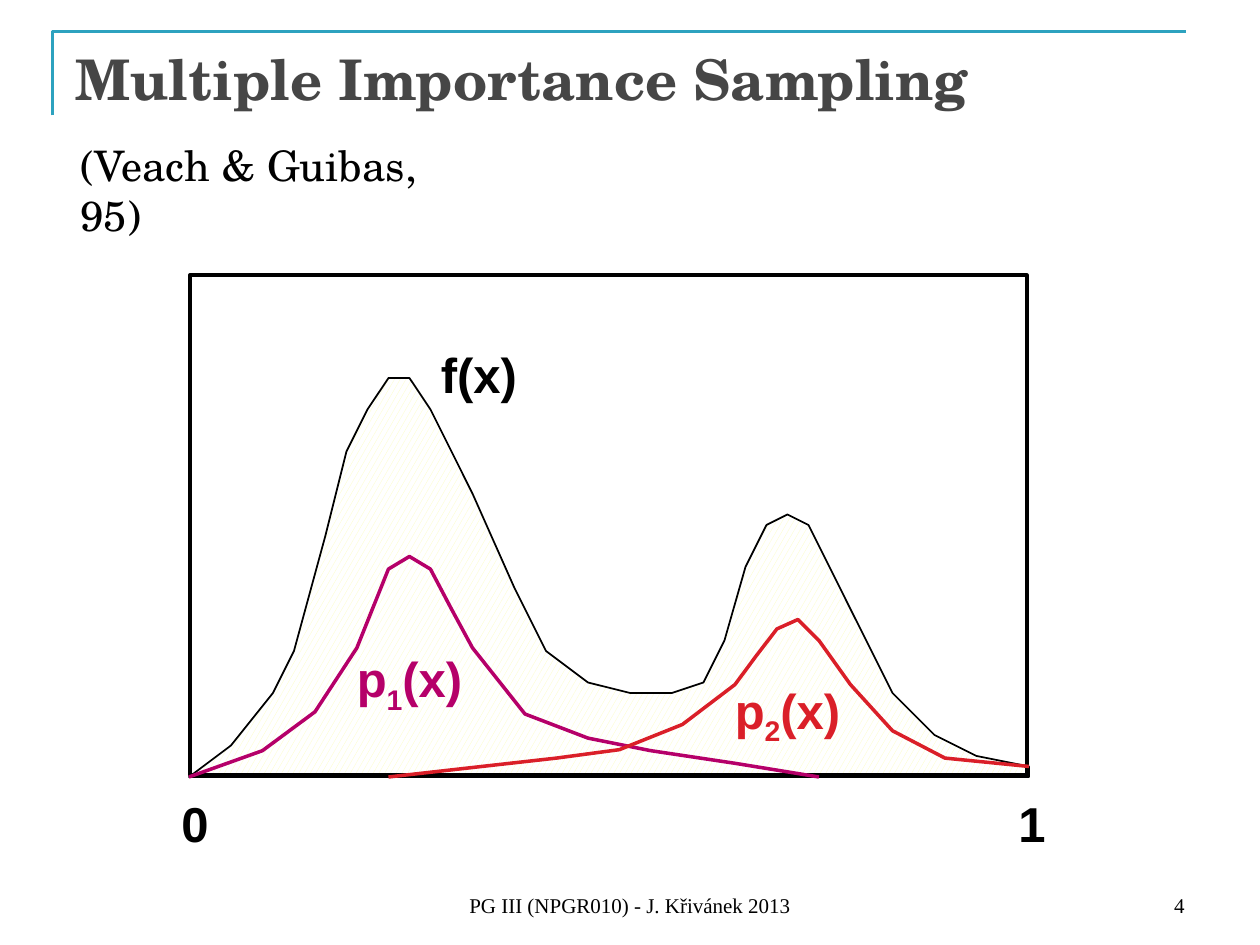
from typing import NamedTuple, Optional

from pptx import Presentation
from pptx import util as u
from pptx.dml.color import RGBColor
from pptx.enum import dml, shapes, text

CELL = u.Inches(1) // 12  # the slide is 120 columns by 90 rows
FINE = 10  # steps per cell in outlines

BLACK = RGBColor(0, 0, 0)
WHITE = RGBColor(255, 255, 255)
GREY = RGBColor(0x46, 0x46, 0x46)
TEAL = RGBColor(0x2D, 0xA2, 0xBF)
PLUM = RGBColor(0xB5, 0x00, 0x69)
RED = RGBColor(0xDA, 0x1F, 0x28)
CREAM = RGBColor(0xFC, 0xFE, 0xB9)

SERIF = "TeX Gyre Schola"
SANS = "Arial"
ROMAN = "Times New Roman"

LEFT, MID, RIGHT = text.PP_ALIGN.LEFT, text.PP_ALIGN.CENTER, text.PP_ALIGN.RIGHT
TOP, BOTTOM = text.MSO_ANCHOR.TOP, text.MSO_ANCHOR.BOTTOM


class Curve(NamedTuple):
    points: list
    color: RGBColor
    width: float
    filled: bool = False


class Label(NamedTuple):
    """A text placed in cells; sub is a subscript and tail follows it."""
    words: str
    box: tuple
    sub: str = ""
    tail: str = ""
    color: RGBColor = BLACK
    font: str = SANS
    size: int = 28
    bold: bool = True
    wrap: bool = False
    align: Optional[text.PP_ALIGN] = LEFT
    anchor: text.MSO_ANCHOR = TOP


CORNER = Curve([(5, 11), (5, 3), (113, 3)], TEAL, 1.5)
TARGET = Curve([
    (18, 74), (22, 71), (26, 66), (28, 62), (31, 51), (33, 43), (35, 39),
    (37, 36), (39, 36), (41, 39), (45, 47), (49, 56), (52, 62), (56, 65),
    (60, 66), (64, 66), (67, 65), (69, 61), (71, 54), (73, 50), (75, 49),
    (77, 50), (81, 58), (85, 66), (89, 70), (93, 72), (98, 73), (98, 74),
], BLACK, 1, True)
FIRST = Curve([
    (18, 74), (25, 71.5), (30, 67.8), (34, 61.7), (37, 54.2), (39, 53),
    (41, 54.2), (43, 58), (45, 61.7), (50, 68), (56, 70.3), (62, 71.5),
    (70, 72.7), (78, 74),
], PLUM, 2)
SECOND = Curve([
    (98, 73), (90, 72.2), (85, 69.6), (81, 65.2), (78, 61), (76, 59),
    (74, 59.9), (72, 62.5), (70, 65.2), (65, 69), (59, 71.4), (53, 72.2),
    (45, 73.1), (37, 74),
], RED, 2)
FRAME = (18.1, 26.2, 79.7, 47.6)

TITLE = Label("Multiple Importance Sampling", (6, 3.6, 108, 15),
              color=GREY, font=SERIF, size=32, wrap=True)
LABELS = [
    Label("f(x)", (40.8, 32.2, 9.6, 6.7)),
    Label("0", (16.1, 75, 4.9, 6.7)),
    Label("1", (95.8, 75, 4.9, 6.7)),
    Label("p", (32.8, 61.2, 12.7, 6.7), "1", "(x)", PLUM),
    Label("p", (68.8, 64.2, 12.7, 6.7), "2", "(x)", RED),
    Label("PG III (NPGR010) - J. Křivánek 2013", (41, 82, 38, 6), font=ROMAN,
          size=12, bold=False, wrap=True, align=MID, anchor=BOTTOM),
    Label("4", (86, 82, 28, 6), font=ROMAN, size=12, bold=False, wrap=True,
          align=RIGHT, anchor=BOTTOM),
    Label("(Veach & Guibas, 95)", (6.5, 12.7, 40, 6), font=SERIF, size=24,
          bold=False, wrap=True),
]


def cells(box: tuple) -> list:
    return [round(side * CELL) for side in box]


def style(shape, color: RGBColor, width: float) -> None:
    shape.shadow.inherit = False
    shape.fill.background()
    shape.line.color.rgb = color
    shape.line.width = u.Pt(width)


def trace(slide, curve: Curve) -> None:
    start, *rest = [(x * FINE, y * FINE) for x, y in curve.points]
    pen = slide.shapes.build_freeform(*start, scale=CELL / FINE)
    pen.add_line_segments(rest, close=curve.filled)
    shape = pen.convert_to_shape()
    style(shape, curve.color, curve.width)
    if curve.filled:
        shape.fill.patterned()
        shape.fill.pattern = dml.MSO_PATTERN.LARGE_CONFETTI
        shape.fill.fore_color.rgb = CREAM
        shape.fill.back_color.rgb = WHITE


def write(shape, label: Label) -> None:
    shape.left, shape.top, shape.width, shape.height = cells(label.box)
    frame = shape.text_frame
    frame.auto_size = text.MSO_AUTO_SIZE.NONE
    frame.word_wrap = label.wrap
    frame.vertical_anchor = label.anchor
    para = frame.paragraphs[0]
    para.alignment = label.align
    font = para.font
    font.name, font.size, font.bold = label.font, u.Pt(label.size), label.bold
    font.color.rgb = label.color
    para.add_run().text = label.words
    if label.sub:
        low = para.add_run()
        low.text = label.sub
        low.font._element.set("baseline", "-25000")
        para.add_run().text = label.tail


def main() -> None:
    deck = Presentation()
    deck.slide_width, deck.slide_height = 120 * CELL, 90 * CELL
    slide = deck.slides.add_slide(deck.slide_layouts.get_by_name("Title Only"))
    write(slide.shapes.title, TITLE)
    trace(slide, CORNER)
    trace(slide, TARGET)
    frame = slide.shapes.add_shape(shapes.MSO_SHAPE.RECTANGLE, *cells(FRAME))
    style(frame, BLACK, 2)
    for curve in (FIRST, SECOND):
        trace(slide, curve)
    for label in LABELS:
        write(slide.shapes.add_textbox(*cells(label.box)), label)
    deck.save("out.pptx")


if __name__ == "__main__":
    main()
